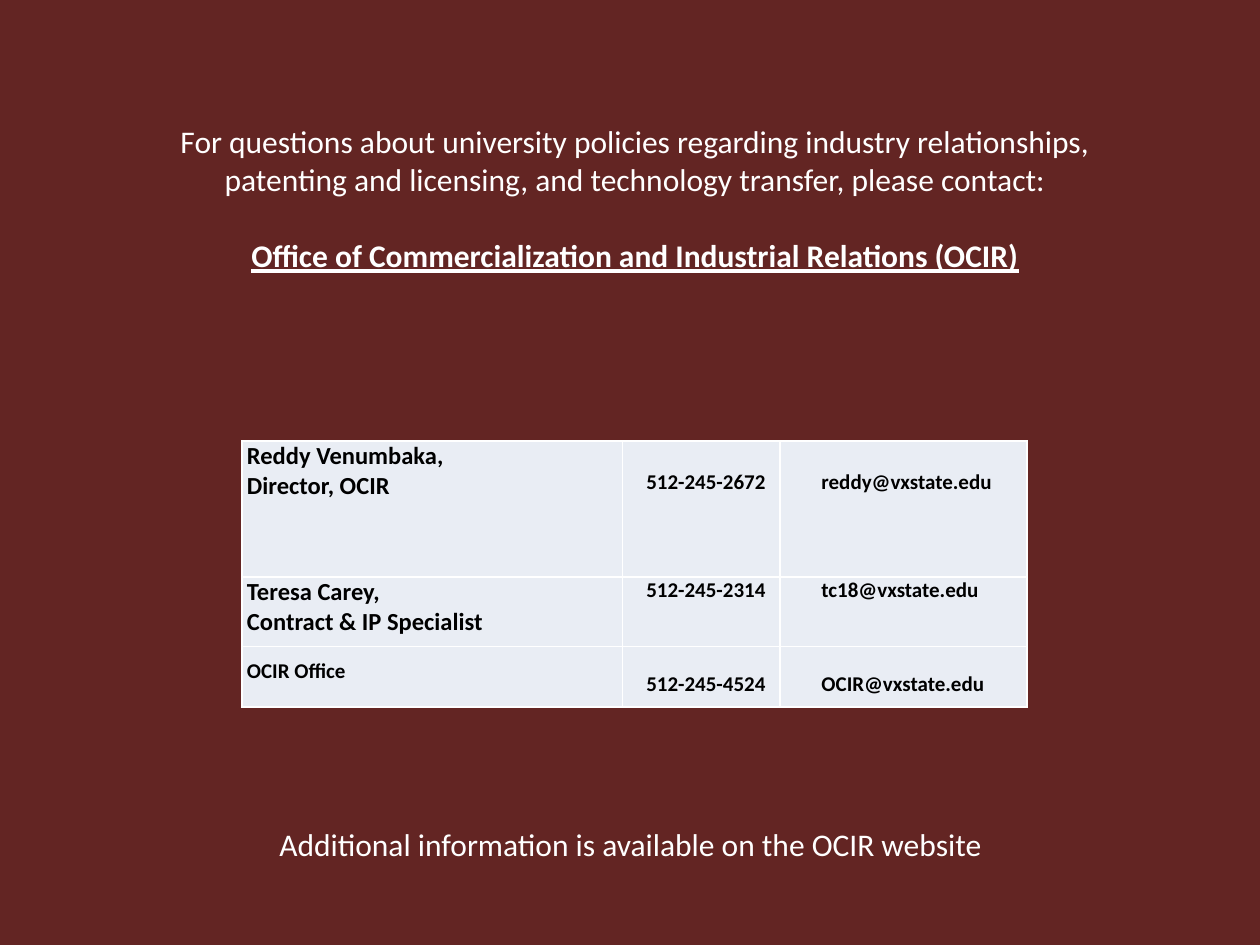
from dataclasses import dataclass

from lxml import etree
from pptx import Presentation
from pptx.dml.color import RGBColor
from pptx.enum.text import MSO_AUTO_SIZE, PP_ALIGN
from pptx.oxml.ns import qn
from pptx.util import Inches, Pt

CENTER = PP_ALIGN.CENTER
GROW = MSO_AUTO_SIZE.SHAPE_TO_FIT_TEXT
FONT = "Calibri"
COLORS = {"back": "632523", "light": "FFFFFF", "cell": "E9EDF4", "dark": "000000"}
COLS = (3.02, 1.25, 1.96)
ROWS = (1.08, 0.55, 0.48)
INDENTS = (0.04, 0.19, 0.33)
EDGES = ("lnL", "lnR", "lnT", "lnB")


@dataclass
class Line:
    text: str
    strong: bool = False
    gap: float = 0


@dataclass
class Entry:
    text: str
    size: float = 12
    top: float = 0


INTRO = [
    Line("For questions about university policies regarding industry relationships, "
         "patenting and licensing, and technology transfer, please contact:"),
    Line("Office of Commercialization and Industrial Relations (OCIR)", True, 22),
]
CLOSING = [Line("Additional information is available on the OCIR website")]
CONTACTS = [
    [Entry("Reddy Venumbaka,\nDirector, OCIR", 14),
     Entry("512-245-2672", top=0.23), Entry("reddy@vxstate.edu", top=0.23)],
    [Entry("Teresa Carey,\nContract & IP Specialist", 14),
     Entry("512-245-2314"), Entry("tc18@vxstate.edu")],
    [Entry("OCIR Office", top=0.1),
     Entry("512-245-4524", top=0.2), Entry("OCIR@vxstate.edu", top=0.2)],
]


def color(name: str) -> RGBColor:
    return RGBColor.from_string(COLORS[name])


def add_run(para, text: str, size: float, tone: str, bold: bool = False):
    run = para.add_run()
    run.text = text
    run.font.name = FONT
    run.font.size = Pt(size)
    run.font.bold = bold
    run.font.color.rgb = color(tone)
    return run


def add_note(slide, left: float, top: float, width: float, height: float,
             lines: list[Line]) -> None:
    box = slide.shapes.add_textbox(Inches(left), Inches(top), Inches(width), Inches(height))
    frame = box.text_frame
    frame.word_wrap = True
    frame.auto_size = GROW
    for i, line in enumerate(lines):
        para = frame.add_paragraph() if i else frame.paragraphs[0]
        para.alignment = CENTER
        para.space_before = Pt(line.gap)
        run = add_run(para, line.text, 18, "light", line.strong)
        run.font.underline = line.strong


def add_edges(cell) -> None:
    props = cell._tc.get_or_add_tcPr()
    for edge in EDGES:
        line = etree.SubElement(props, qn(f"a:{edge}"), w=str(Pt(1)))
        fill = etree.SubElement(line, qn("a:solidFill"))
        etree.SubElement(fill, qn("a:srgbClr"), val=COLORS["light"])


def fill_cell(cell, entry: Entry, indent: float) -> None:
    add_edges(cell)
    cell.fill.solid()
    cell.fill.fore_color.rgb = color("cell")
    cell.margin_left, cell.margin_top = Inches(indent), Inches(entry.top)
    cell.margin_right = cell.margin_bottom = 0
    for i, text in enumerate(entry.text.split("\n")):
        frame = cell.text_frame
        para = frame.add_paragraph() if i else frame.paragraphs[0]
        add_run(para, text, entry.size, "dark", True)


def add_contacts(slide, left: float, top: float) -> None:
    table = slide.shapes.add_table(
        len(ROWS), len(COLS), Inches(left), Inches(top),
        Inches(sum(COLS)), Inches(sum(ROWS))).table
    table.first_row = table.horz_banding = False
    for col, width in zip(table.columns, COLS):
        col.width = Inches(width)
    for row, height, entries in zip(table.rows, ROWS, CONTACTS):
        row.height = Inches(height)
        for cell, entry, indent in zip(row.cells, entries, INDENTS):
            fill_cell(cell, entry, indent)


def main() -> None:
    deck = Presentation()
    deck.slide_width, deck.slide_height = Inches(10), Inches(7.5)
    slide = deck.slides.add_slide(deck.slide_layouts[6])
    slide.background.fill.solid()
    slide.background.fill.fore_color.rgb = color("back")
    add_note(slide, 1.25, 0.92, 7.58, 1.62, INTRO)
    add_contacts(slide, 1.92, 3.5)
    add_note(slide, 1.67, 6.5, 6.67, 0.4, CLOSING)
    deck.save("out.pptx")


if __name__ == "__main__":
    main()
